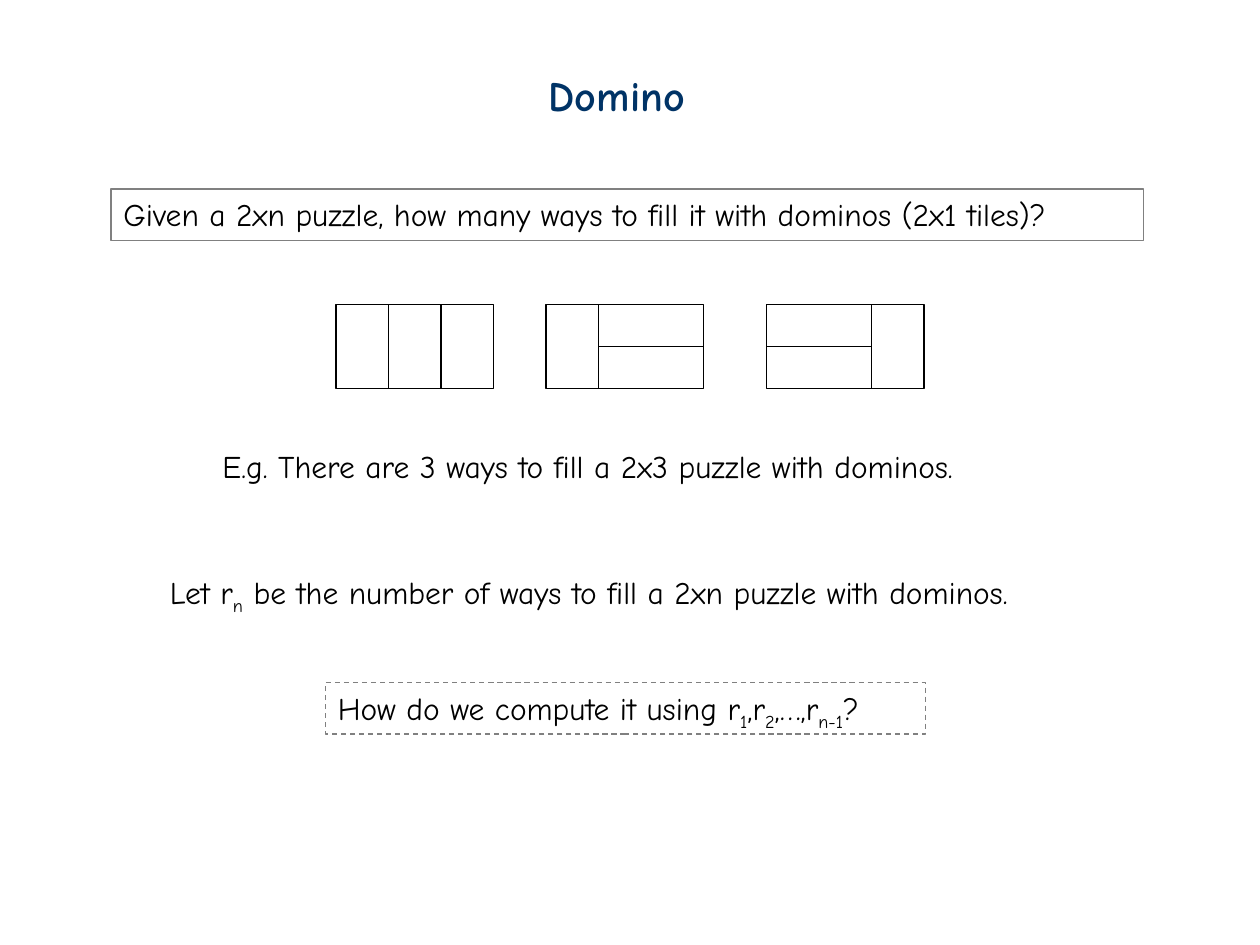
from dataclasses import dataclass

from lxml.etree import SubElement
from pptx import Presentation
from pptx.dml.color import RGBColor
from pptx.enum.dml import MSO_LINE
from pptx.enum.shapes import MSO_CONNECTOR, MSO_SHAPE
from pptx.enum.text import MSO_ANCHOR, PP_ALIGN
from pptx.oxml.ns import qn
from pptx.slide import Slide
from pptx.util import Pt


@dataclass(frozen=True)
class Theme:
    font: str = "Comic Neue"
    title_color: RGBColor = RGBColor(0x00, 0x33, 0x66)
    ink: RGBColor = RGBColor(0x00, 0x00, 0x00)
    frame: RGBColor = RGBColor(0x80, 0x80, 0x80)
    title_size: float = 24
    body_size: float = 18
    line_width: float = 0.75
    subscript: str = "-25000"


@dataclass(frozen=True)
class Run:
    text: str
    subscript: bool = False


@dataclass(frozen=True)
class Statement:
    left: float
    top: float
    width: float
    height: float
    runs: tuple[Run, ...]
    framed: bool = False
    dashed: bool = False
    title: bool = False


@dataclass(frozen=True)
class Tiling:
    """A filled puzzle; each cut is x1, y1, x2, y2 in cells."""
    left: float
    cuts: tuple[tuple[int, int, int, int], ...]


THEME = Theme()

# Puzzle grid, in points
COLUMNS, ROWS = 3, 2
CELL_WIDTH, CELL_HEIGHT = 30, 24
TILING_TOP = 174

TILINGS = (
    Tiling(192, ((1, 0, 1, 2), (2, 0, 2, 2))),
    Tiling(312, ((1, 0, 1, 2), (1, 1, 3, 1))),
    Tiling(438, ((2, 0, 2, 2), (0, 1, 2, 1))),
)

STATEMENTS = (
    Statement(306.5, 36, 95.5, 36, (Run("Domino"),), title=True),
    Statement(63.5, 108, 590, 29.5, (
        Run("Given a 2xn puzzle, how many ways to fill it with dominos (2x1 tiles)?"),
    ), framed=True),
    Statement(120, 252, 477.5, 29, (
        Run("E.g. There are 3 ways to fill a 2x3 puzzle with dominos."),
    )),
    Statement(90, 324, 539.5, 29, (
        Run("Let r"), Run("n", True),
        Run(" be the number of ways to fill a 2xn puzzle with dominos."),
    )),
    Statement(186, 390, 343, 29.5, (
        Run("How do we compute it using r"), Run("1", True),
        Run(",r"), Run("2", True),
        Run(",…,r"), Run("n-1", True), Run("?"),
    ), framed=True, dashed=True),
)


def add_rectangle(slide: Slide, left: float, top: float, width: float,
                  height: float, color: RGBColor):
    shape = slide.shapes.add_shape(
        MSO_SHAPE.RECTANGLE, Pt(left), Pt(top), Pt(width), Pt(height))
    shape.shadow.inherit = False
    shape.fill.background()
    shape.line.color.rgb = color
    shape.line.width = Pt(THEME.line_width)
    return shape


def add_statement(slide: Slide, statement: Statement) -> None:
    bounds = (statement.left, statement.top, statement.width, statement.height)
    if statement.framed:
        shape = add_rectangle(slide, *bounds, THEME.frame)
        if statement.dashed:
            shape.line.dash_style = MSO_LINE.DASH
    else:
        shape = slide.shapes.add_textbox(*map(Pt, bounds))

    text_frame = shape.text_frame
    text_frame.word_wrap = True
    text_frame.vertical_anchor = MSO_ANCHOR.TOP
    paragraph = text_frame.paragraphs[0]
    paragraph.alignment = PP_ALIGN.LEFT
    for part in statement.runs:
        run = paragraph.add_run()
        run.text = part.text
        run.font.name = THEME.font
        run.font.bold = statement.title
        run.font.size = Pt(THEME.title_size if statement.title else THEME.body_size)
        run.font.color.rgb = THEME.title_color if statement.title else THEME.ink
        if part.subscript:
            run._r.get_or_add_rPr().set("baseline", THEME.subscript)


def add_tiling(slide: Slide, tiling: Tiling) -> None:
    add_rectangle(slide, tiling.left, TILING_TOP,
                  COLUMNS * CELL_WIDTH, ROWS * CELL_HEIGHT, THEME.ink)
    for x1, y1, x2, y2 in tiling.cuts:
        connector = slide.shapes.add_connector(
            MSO_CONNECTOR.STRAIGHT,
            Pt(tiling.left + x1 * CELL_WIDTH), Pt(TILING_TOP + y1 * CELL_HEIGHT),
            Pt(tiling.left + x2 * CELL_WIDTH), Pt(TILING_TOP + y2 * CELL_HEIGHT))
        connector.line.color.rgb = THEME.ink
        connector.line.width = Pt(THEME.line_width)
        SubElement(connector._element.spPr, qn("a:effectLst"))


def main() -> None:
    presentation = Presentation()
    presentation.slide_width, presentation.slide_height = Pt(720), Pt(540)
    slide = presentation.slides.add_slide(presentation.slide_layouts[6])

    # Title and question
    for statement in STATEMENTS[:2]:
        add_statement(slide, statement)

    # The three ways to fill a 2x3 puzzle
    for tiling in TILINGS:
        add_tiling(slide, tiling)

    # Example, definition and closing question
    for statement in STATEMENTS[2:]:
        add_statement(slide, statement)

    presentation.save("out.pptx")


if __name__ == "__main__":
    main()
